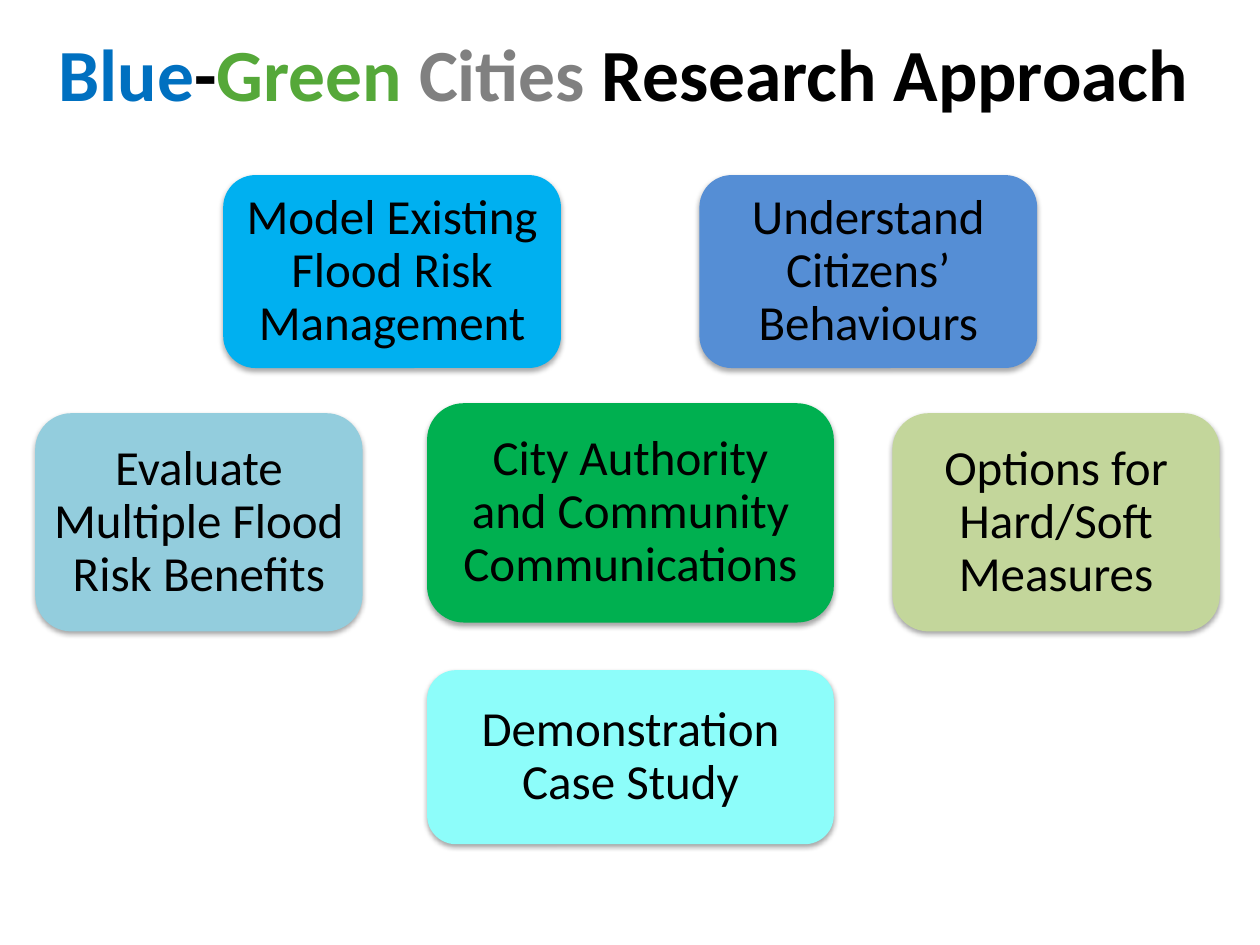
from dataclasses import dataclass

from lxml import etree
from pptx import Presentation
from pptx import util as u
from pptx.dml.color import RGBColor
from pptx.enum import shapes, text
from pptx.oxml import ns


@dataclass(frozen=True)
class Theme:
    font: str = "Calibri"
    title_size: int = 42
    card_size: int = 28
    black: str = "000000"
    title_blue: str = "0070C0"
    title_green: str = "55A839"
    title_grey: str = "808080"
    sky: str = "00B0F0"
    blue: str = "558ED5"
    teal: str = "93CDDD"
    green: str = "00B050"
    olive: str = "C3D69B"
    aqua: str = "8DFDFA"


@dataclass(frozen=True)
class Box:
    """A region of the page, in centimetres."""
    left: float
    top: float
    width: float
    height: float


@dataclass(frozen=True)
class Card:
    label: str
    fill: str
    margin: float = 0.25


THEME = Theme()


def place(shape, box):
    shape.left, shape.top = u.Cm(box.left), u.Cm(box.top)
    shape.width, shape.height = u.Cm(box.width), u.Cm(box.height)


def set_frame(frame, side_margin, end_margin):
    frame.word_wrap = True
    frame.auto_size = text.MSO_AUTO_SIZE.NONE
    frame.vertical_anchor = text.MSO_ANCHOR.MIDDLE
    frame.margin_left = frame.margin_right = u.Cm(side_margin)
    frame.margin_top = frame.margin_bottom = u.Cm(end_margin)


def add_span(para, words, size, colour, bold=False):
    span = para.add_run()
    span.text = words
    span.font.name = THEME.font
    span.font.size = u.Pt(size)
    span.font.bold = bold
    span.font.color.rgb = RGBColor.from_string(colour)


def add_soft_shadow(shape):
    shape.shadow.inherit = False
    effects = shape.fill._xPr.find(ns.qn("a:effectLst"))
    shadow = etree.SubElement(
        effects, ns.qn("a:outerShdw"), blurRad=str(u.Pt(3.1)),
        dist=str(u.Pt(1.8)), dir="5400000", rotWithShape="0")
    colour = etree.SubElement(shadow, ns.qn("a:srgbClr"), val=THEME.black)
    etree.SubElement(colour, ns.qn("a:alpha"), val="35000")


def add_title(page, box, spans):
    title = page.shapes.title
    place(title, box)
    set_frame(title.text_frame, 0, 0)
    para = title.text_frame.paragraphs[0]
    para.alignment = text.PP_ALIGN.CENTER
    for words, colour in spans:
        add_span(para, words, THEME.title_size, colour, bold=True)


def add_card(page, box, card):
    shape = page.shapes.add_shape(
        shapes.MSO_SHAPE.ROUNDED_RECTANGLE, 0, 0, 0, 0)
    place(shape, box)
    shape.fill.solid()
    shape.fill.fore_color.rgb = RGBColor.from_string(card.fill)
    shape.line.fill.background()
    add_soft_shadow(shape)
    set_frame(shape.text_frame, card.margin, 0.25)
    para = shape.text_frame.paragraphs[0]
    para.alignment = text.PP_ALIGN.CENTER
    para.line_spacing = 0.9
    add_span(para, card.label, THEME.card_size, THEME.black)


def add_row(page, box, card_width, cards):
    """Spread cards from the left edge of the box to its right edge."""
    step = (box.width - card_width) / max(len(cards) - 1, 1)
    for index, card in enumerate(cards):
        left = box.left + index * step
        add_card(page, Box(left, box.top, card_width, box.height), card)


def main():
    deck = Presentation()
    deck.slide_width, deck.slide_height = u.Cm(25.4), u.Cm(19.05)
    page = deck.slides.add_slide(deck.slide_layouts[5])

    add_title(page, Box(-0.13, 0, 25.4, 2.92), [
        ("Blue", THEME.title_blue),
        ("-", THEME.black),
        ("Green ", THEME.title_green),
        ("Cities ", THEME.title_grey),
        ("Research Approach", THEME.black),
    ])

    # Upper pair
    add_row(page, Box(4.5, 3.53, 16.41, 3.89), 6.81, [
        Card("Model Existing Flood Risk Management", THEME.sky),
        Card("Understand Citizens’ Behaviours", THEME.blue),
    ])
    # Outer pair beside the centre
    add_row(page, Box(0.71, 8.33, 23.88, 4.4), 6.6, [
        Card("Evaluate Multiple Flood Risk Benefits", THEME.teal, 0.13),
        Card("Options for Hard/Soft Measures", THEME.olive),
    ])
    # Central hub and the case study below it
    add_row(page, Box(8.61, 8.13, 8.2, 4.42), 8.2, [
        Card("City Authority and Community Communications",
             THEME.green, 0.4),
    ])
    add_row(page, Box(8.61, 13.51, 8.2, 3.51), 8.2, [
        Card("Demonstration Case Study", THEME.aqua),
    ])

    deck.save("out.pptx")


if __name__ == "__main__":
    main()
